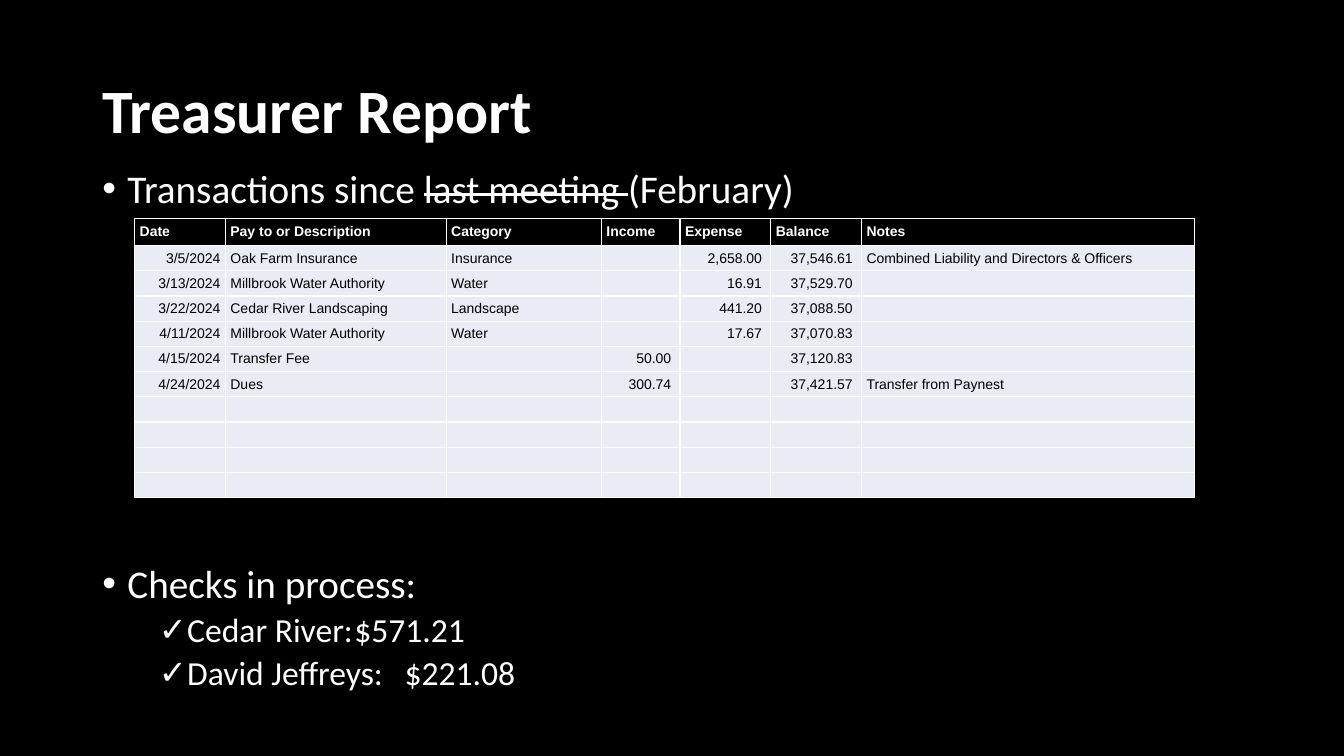
from lxml.etree import SubElement
from pptx import Presentation
from pptx.dml.color import RGBColor
from pptx.enum.text import MSO_ANCHOR, PP_ALIGN
from pptx.oxml.ns import qn
from pptx.util import Pt

COLORS = {"black": "000000", "white": "FFFFFF", "row": "E9EBF5"}
COLUMN_WIDTHS = [64.8, 157.7, 110.9, 56.2, 64.8, 64.8, 237.6]
HEADINGS = ["Date", "Pay to or Description", "Category", "Income", "Expense", "Balance", "Notes"]
TRANSACTIONS = [
    ["3/5/2024", "Oak Farm Insurance", "Insurance", "", "2,658.00 ", "37,546.61 ",
     "Combined Liability and Directors & Officers"],
    ["3/13/2024", "Millbrook Water Authority", "Water", "", "16.91 ", "37,529.70 ", ""],
    ["3/22/2024", "Cedar River Landscaping", "Landscape", "", "441.20 ", "37,088.50 ", ""],
    ["4/11/2024", "Millbrook Water Authority", "Water", "", "17.67 ", "37,070.83 ", ""],
    ["4/15/2024", "Transfer Fee", "", "50.00 ", "", "37,120.83 ", ""],
    ["4/24/2024", "Dues", "", "300.74 ", "", "37,421.57 ", "Transfer from Paynest"],
]
EMPTY_ROWS = 4
RIGHT_COLUMNS = {0, 3, 4, 5}


class ReportPage:
    """Draws styled elements on the current slide."""

    def __init__(self, deck):
        self.page = deck.slides.add_slide(deck.slide_layouts[6])
        self.text_font, self.table_font = "Calibri", "Arial"
        fill = self.page.background.fill
        fill.solid()
        fill.fore_color.rgb = self.color("black")

    def color(self, name):
        return RGBColor.from_string(COLORS[name])

    def style_span(self, span, font, size, color, bold=False):
        span.font.name = font
        span.font.size = Pt(size)
        span.font.bold = bold
        span.font.color.rgb = self.color(color)

    def text_box(self, top, height, anchor=MSO_ANCHOR.TOP):
        box = self.page.shapes.add_textbox(Pt(66), Pt(top), Pt(828), Pt(height))
        box.text_frame.word_wrap = True
        box.text_frame.vertical_anchor = anchor
        return box.text_frame

    def add_spans(self, para, parts, size, bold=False):
        para.line_spacing = 0.9
        for part in parts:
            span = para.add_run()
            span.text = part
            self.style_span(span, self.text_font, size, "white", bold)

    def bullet(self, para, parts, size, mark, indent, before):
        self.add_spans(para, parts, size)
        para.space_before = Pt(before)
        properties = para._p.get_or_add_pPr()
        properties.set("marL", str(Pt(indent)))
        properties.set("indent", str(Pt(-18)))
        SubElement(properties, qn("a:buFont"), typeface=self.table_font)
        SubElement(properties, qn("a:buChar"), char=mark)

    def border(self, cell):
        properties = cell._tc.get_or_add_tcPr()
        for side in ("lnL", "lnR", "lnT", "lnB"):
            line = SubElement(properties, qn(f"a:{side}"), w=str(Pt(1)))
            fill = SubElement(line, qn("a:solidFill"))
            SubElement(fill, qn("a:srgbClr"), val=COLORS["white"])

    def cell(self, cell, text, header, right):
        cell.margin_left = cell.margin_right = Pt(3.6)
        cell.margin_top = cell.margin_bottom = Pt(3.6 if header else 0)
        cell.vertical_anchor = MSO_ANCHOR.MIDDLE
        self.border(cell)
        cell.fill.solid()
        cell.fill.fore_color.rgb = self.color("black" if header else "row")
        cell.text_frame.text = text
        para = cell.text_frame.paragraphs[0]
        para.alignment = PP_ALIGN.RIGHT if right else PP_ALIGN.LEFT
        for span in para.runs:
            self.style_span(span, self.table_font, 10, "white" if header else "black", header)
        if not text:
            SubElement(para._p, qn("a:endParaRPr"), sz="1000")

    def table(self, left, top, widths, rows):
        heights = [18.5] + [18] * (len(rows) - 1)
        frame = self.page.shapes.add_table(
            len(rows), len(widths), Pt(left), Pt(top), Pt(sum(widths)), Pt(sum(heights)))
        table = frame.table
        for column, width in zip(table.columns, widths):
            column.width = Pt(width)
        for row, height in zip(table.rows, heights):
            row.height = Pt(height)
        for i, texts in enumerate(rows):
            for j, text in enumerate(texts):
                self.cell(table.cell(i, j), text, i == 0, i > 0 and j in RIGHT_COLUMNS)


def main():
    deck = Presentation()
    deck.slide_width, deck.slide_height = Pt(960), Pt(540)
    report = ReportPage(deck)

    title = report.text_box(28.8, 104.4, MSO_ANCHOR.MIDDLE)
    report.add_spans(title.paragraphs[0], ["Treasurer Report"], 44, True)

    heading = report.text_box(117.4, 38).paragraphs[0]
    report.bullet(heading, ["Transactions since ", "last meeting ", "(February)"], 28, "•", 18, 10)
    heading.runs[1].font._element.set("strike", "sngStrike")

    checks = report.text_box(399.4, 112)
    report.bullet(checks.paragraphs[0], ["Checks in process:"], 28, "•", 18, 10)
    for check in ("Cedar River:\t$571.21", "David Jeffreys:\t$221.08"):
        report.bullet(checks.add_paragraph(), [check], 24, "✓", 58.5, 5)

    blank_rows = [[""] * len(HEADINGS)] * EMPTY_ROWS
    report.table(96.2, 156.2, COLUMN_WIDTHS, [HEADINGS] + TRANSACTIONS + blank_rows)
    deck.save("out.pptx")


if __name__ == "__main__":
    main()
